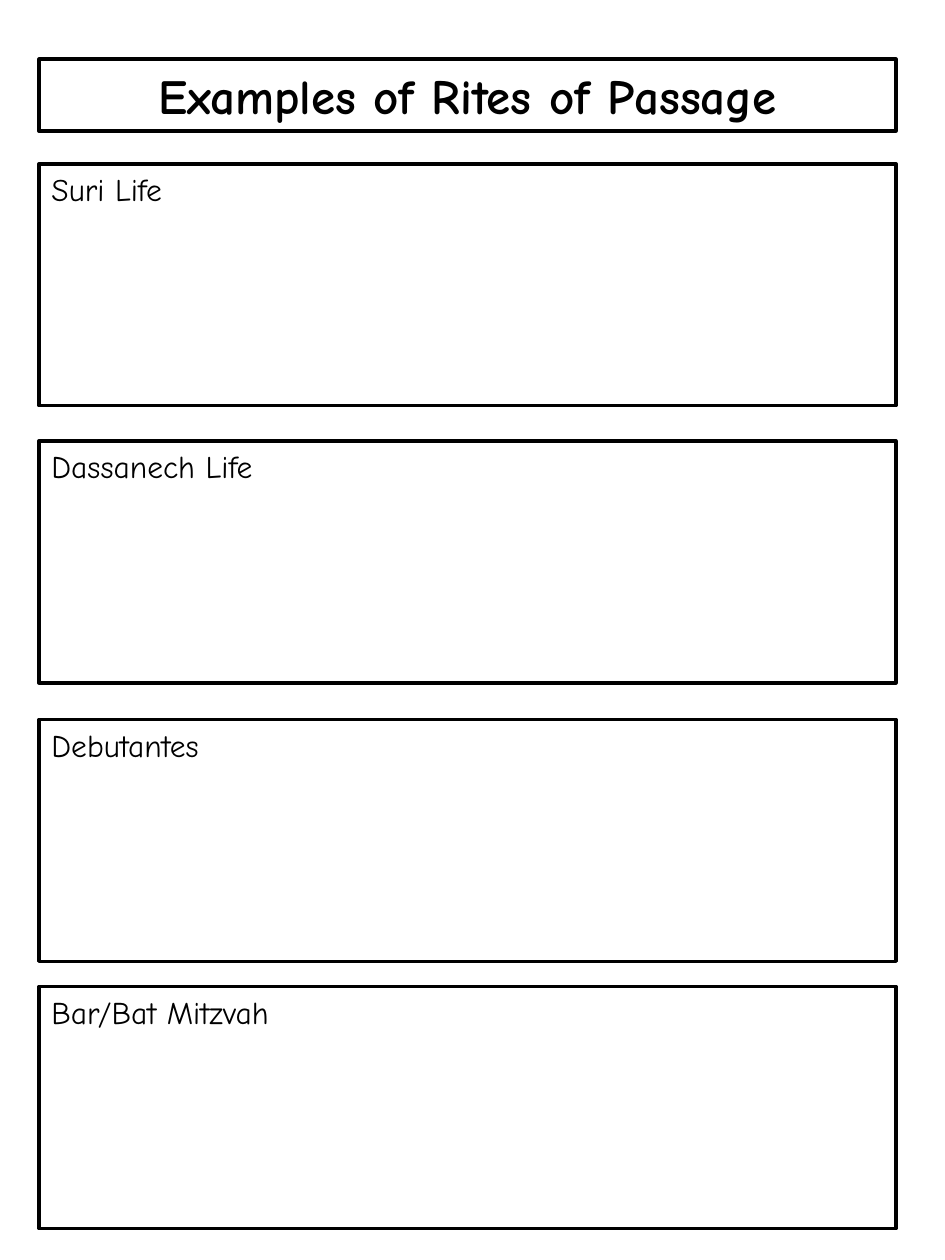
from pptx import Presentation
from pptx.dml.color import RGBColor
from pptx.enum.shapes import MSO_SHAPE
from pptx.enum.text import MSO_ANCHOR, MSO_AUTO_SIZE, PP_ALIGN
from pptx.util import Inches, Pt

BLACK = RGBColor(0x00, 0x00, 0x00)
WHITE = RGBColor(0xFF, 0xFF, 0xFF)

# Places in percent of the slide's width or height
LEFT, WIDTH = 4.13, 90.67
TITLE_TOP, TITLE_HEIGHT = 4.7, 5.7
BOX_HEIGHT = 19.2
BOXES = [
    (13, "Suri Life"),
    (35, "Dassanech Life"),
    (57.1, "Debutantes"),
    (78.3, "Bar/Bat Mitzvah"),
]


class Worksheet:
    """Holds the style and the current slide."""

    font_name = "Comic Neue"
    line_width = Pt(2)

    def __init__(self, presentation):
        self.width = presentation.slide_width
        self.height = presentation.slide_height
        self.slide = presentation.slides.add_slide(presentation.slide_layouts[5])

    def place(self, top, height):
        return (int(self.width * LEFT / 100), int(self.height * top / 100),
                int(self.width * WIDTH / 100), int(self.height * height / 100))

    def format(self, shape, text, size, alignment, bold=False):
        shape.fill.solid()
        shape.fill.fore_color.rgb = WHITE
        shape.line.color.rgb = BLACK
        shape.line.width = self.line_width
        frame = shape.text_frame
        frame.text = text
        frame.word_wrap = True
        frame.auto_size = MSO_AUTO_SIZE.NONE
        frame.vertical_anchor = MSO_ANCHOR.TOP
        paragraph = frame.paragraphs[0]
        paragraph.alignment = alignment
        font = paragraph.font
        font.name = self.font_name
        font.size = Pt(size)
        font.bold = bold
        font.color.rgb = BLACK

    def title(self, text):
        shape = self.slide.shapes.title
        shape.left, shape.top, shape.width, shape.height = self.place(
            TITLE_TOP, TITLE_HEIGHT)
        self.format(shape, text, 28, PP_ALIGN.CENTER, bold=True)

    def answer_box(self, top, label):
        shape = self.slide.shapes.add_shape(
            MSO_SHAPE.RECTANGLE, *self.place(top, BOX_HEIGHT))
        shape.shadow.inherit = False
        self.format(shape, label, 18, PP_ALIGN.LEFT)


def main():
    presentation = Presentation()
    presentation.slide_width = Inches(7.5)
    presentation.slide_height = Inches(10)
    worksheet = Worksheet(presentation)

    # Heading
    worksheet.title("Examples of Rites of Passage")

    # One box to write in for each example
    for top, label in BOXES:
        worksheet.answer_box(top, label)

    presentation.save("out.pptx")


if __name__ == "__main__":
    main()
